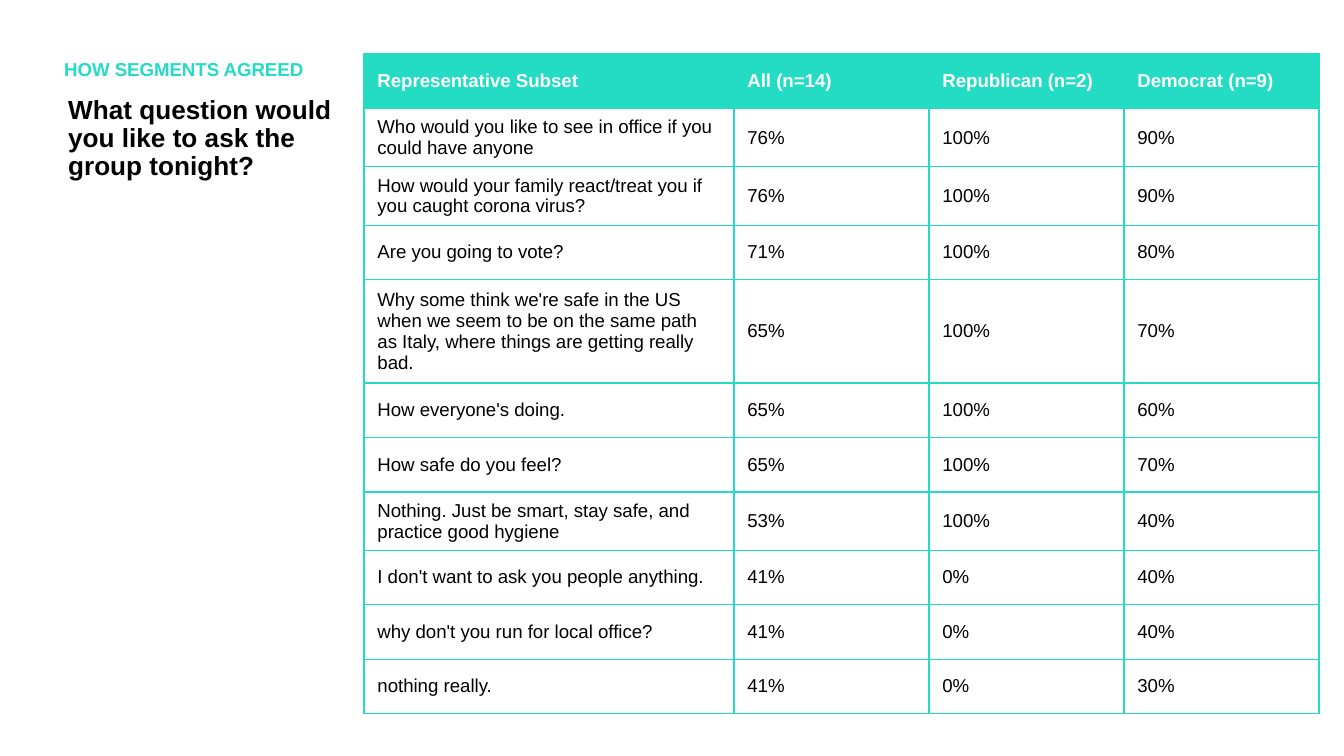
from pptx import Presentation
from pptx.dml.color import RGBColor
from pptx.enum.text import MSO_ANCHOR as Anchor
from pptx.oxml import parse_xml
from pptx.oxml.ns import nsdecls
from pptx.util import Pt

PX = 914400 / 134.4
TEAL, BLACK, WHITE = "24DBC3", "000000", "FFFFFF"


def px(n):
    return round(n * PX)


def rgb(code):
    return RGBColor.from_string(code)


class Deck:
    font = "Arial"
    border = TEAL
    border_width = Pt(0.75)

    def __init__(self, prs):
        self.s = prs.slides.add_slide(prs.slide_layouts[6])

    def style(self, p, size, color, bold):
        for r in p.runs:
            r.font.name = self.font
            r.font.size = Pt(size)
            r.font.bold = bold
            r.font.color.rgb = rgb(color)

    def text(self, x, y, w, h, text, size, color):
        sp = self.s.shapes.add_textbox(px(x), px(y), px(w), px(h))
        tf = sp.text_frame
        tf.word_wrap = True
        tf.text = text
        p = tf.paragraphs[0]
        p.line_spacing = 0.9
        self.style(p, size, color, True)

    def borders(self, cell):
        tc_pr = cell._tc.get_or_add_tcPr()
        for i, side in enumerate(("lnL", "lnR", "lnT", "lnB")):
            tc_pr.insert(i, parse_xml(
                f'<a:{side} {nsdecls("a")} w="{self.border_width}"><a:solidFill>'
                f'<a:srgbClr val="{self.border}"/></a:solidFill></a:{side}>'))

    def table(self, x, y, h, widths, rows):
        table = self.s.shapes.add_table(
            len(rows), len(widths), px(x), px(y), px(sum(widths)), px(h)).table
        for col, w in zip(table.columns, widths):
            col.width = px(w)
        for i, row in enumerate(rows):
            header = i == 0
            for j, value in enumerate(row):
                cell = table.cell(i, j)
                cell.text = value
                cell.vertical_anchor = Anchor.MIDDLE
                cell.fill.solid()
                cell.fill.fore_color.rgb = rgb(TEAL if header else WHITE)
                self.style(cell.text_frame.paragraphs[0], 10,
                           WHITE if header else BLACK, header)
                self.borders(cell)


ROWS = [
    ("Representative Subset", "All (n=14)", "Republican (n=2)", "Democrat (n=9)"),
    ("Who would you like to see in office if you could have anyone", "76%", "100%", "90%"),
    ("How would your family react/treat you if you caught corona virus?", "76%", "100%", "90%"),
    ("Are you going to vote?", "71%", "100%", "80%"),
    ("Why some think we're safe in the US when we seem to be on the same path "
     "as Italy, where things are getting really bad.", "65%", "100%", "70%"),
    ("How everyone's doing.", "65%", "100%", "60%"),
    ("How safe do you feel?", "65%", "100%", "70%"),
    ("Nothing. Just be smart, stay safe, and practice good hygiene", "53%", "100%", "40%"),
    ("I don't want to ask you people anything.", "41%", "0%", "40%"),
    ("why don't you run for local office?", "41%", "0%", "40%"),
    ("nothing really.", "41%", "0%", "30%"),
]


def main():
    prs = Presentation()
    prs.slide_width, prs.slide_height = px(1344), px(756)
    deck = Deck(prs)

    # Question and section label
    deck.text(55, 90, 309, 593, "What question would you like to ask the group tonight?", 14, BLACK)
    deck.text(51, 54, 312, 38, "HOW SEGMENTS AGREED", 10, TEAL)

    # Agreement by segment
    deck.table(364, 54, 600, [370, 195, 195, 195], ROWS)

    prs.save("out.pptx")


if __name__ == "__main__":
    main()
